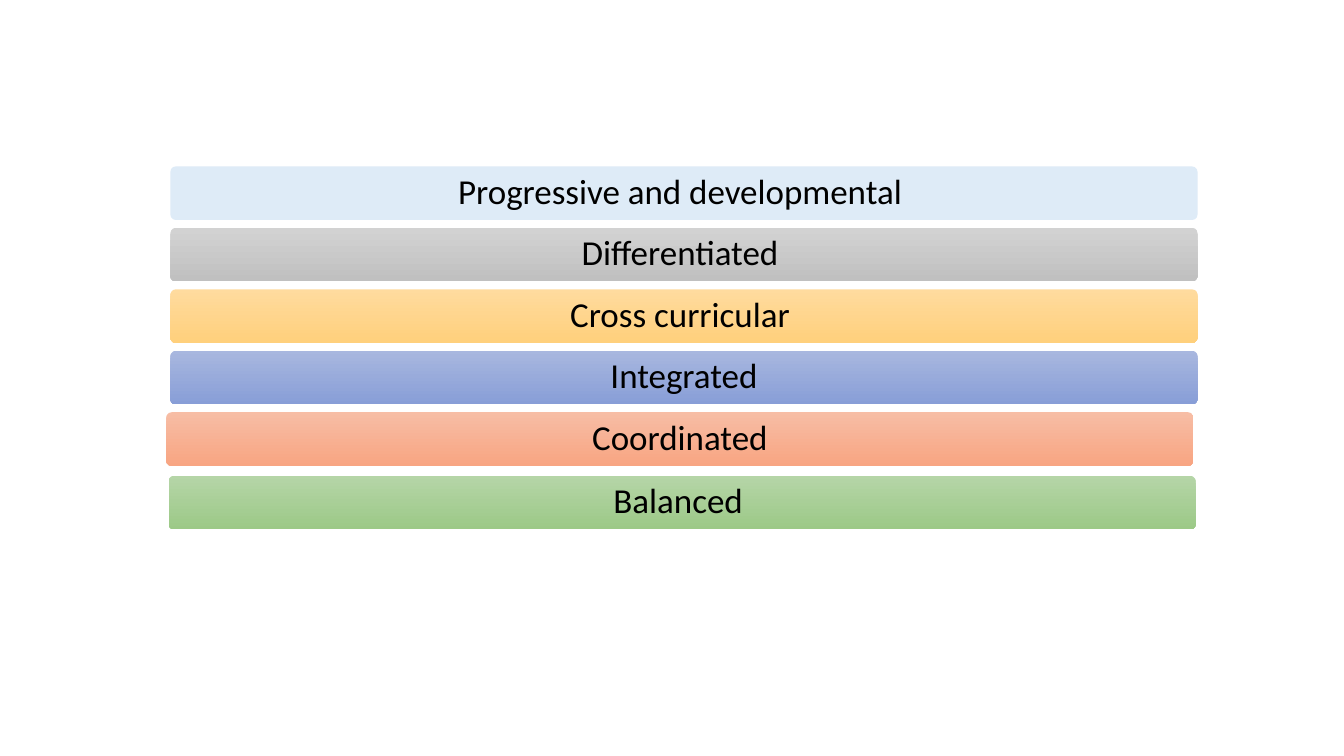
from dataclasses import dataclass

from pptx import Presentation
from pptx.dml.color import RGBColor
from pptx.enum import shapes, text
from pptx.shapes.autoshape import Shape
from pptx.slide import Slide
from pptx.util import Pt


@dataclass(frozen=True)
class Theme:
    font: str = "Calibri"
    label_size: float = 25
    ink: str = "000000"
    pale_blue: tuple[str, ...] = ("DEEBF7",)
    grey: tuple[str, ...] = ("D2D2D2", "C0C0C0")
    gold: tuple[str, ...] = ("FFDB9E", "FFD07C")
    blue: tuple[str, ...] = ("A8B7DF", "889ED7")
    orange: tuple[str, ...] = ("F7BDA5", "F8A582")
    green: tuple[str, ...] = ("B5D5A7", "9CC987")


@dataclass(frozen=True)
class Principle:
    label: str
    colours: tuple[str, ...]  # one for a plain fill, two for top to bottom
    shift_x: float = 0
    shift_y: float = 0


THEME = Theme()

# Stack of bars, in points
LEFT, TOP = 121.7, 118.9
WIDTH, HEIGHT = 733.7, 38.2
PITCH = 43.9

PRINCIPLES = (
    Principle("Progressive and developmental ", THEME.pale_blue),
    Principle("Differentiated ", THEME.grey),
    Principle("Cross curricular ", THEME.gold),
    Principle("Integrated", THEME.blue),
    Principle("Coordinated", THEME.orange, shift_x=-2.9),
    Principle("Balanced ", THEME.green, shift_x=-1.3, shift_y=1.5),
)


def paint(bar: Shape, colours: tuple[str, ...]) -> None:
    """Fill a bar with a plain colour or a vertical gradient."""
    if len(colours) == 1:
        bar.fill.solid()
        bar.fill.fore_color.rgb = RGBColor.from_string(colours[0])
        return
    bar.fill.gradient()
    bar.fill.gradient_angle = 270
    for stop, colour in zip(bar.fill.gradient_stops, colours):
        stop.color.rgb = RGBColor.from_string(colour)


def write(bar: Shape, label: str, *, size: float, colour: str, font: str) -> None:
    """Set centred text in a bar."""
    frame = bar.text_frame
    frame.word_wrap = True
    frame.vertical_anchor = text.MSO_ANCHOR.MIDDLE
    frame.margin_left = frame.margin_right = Pt(5)
    frame.margin_top = frame.margin_bottom = Pt(3.6)
    line = frame.paragraphs[0]
    line.alignment = text.PP_ALIGN.CENTER
    line.line_spacing = 0.9
    run = line.add_run()
    run.text = label
    run.font.name = font
    run.font.size = Pt(size)
    run.font.color.rgb = RGBColor.from_string(colour)


def draw_principle(slide: Slide, row: int, principle: Principle) -> None:
    bar = slide.shapes.add_shape(
        shapes.MSO_SHAPE.ROUNDED_RECTANGLE,
        Pt(LEFT + principle.shift_x),
        Pt(TOP + row * PITCH + principle.shift_y),
        Pt(WIDTH),
        Pt(HEIGHT),
    )
    bar.adjustments[0] = 0.1
    bar.shadow.inherit = False
    bar.line.fill.background()
    paint(bar, principle.colours)
    write(bar, principle.label, size=THEME.label_size, colour=THEME.ink, font=THEME.font)


def main() -> None:
    deck = Presentation()
    deck.slide_width, deck.slide_height = Pt(960), Pt(540)
    slide = deck.slides.add_slide(deck.slide_layouts[6])  # blank: no title
    for row, principle in enumerate(PRINCIPLES):
        draw_principle(slide, row, principle)
    deck.save("out.pptx")


if __name__ == "__main__":
    main()
